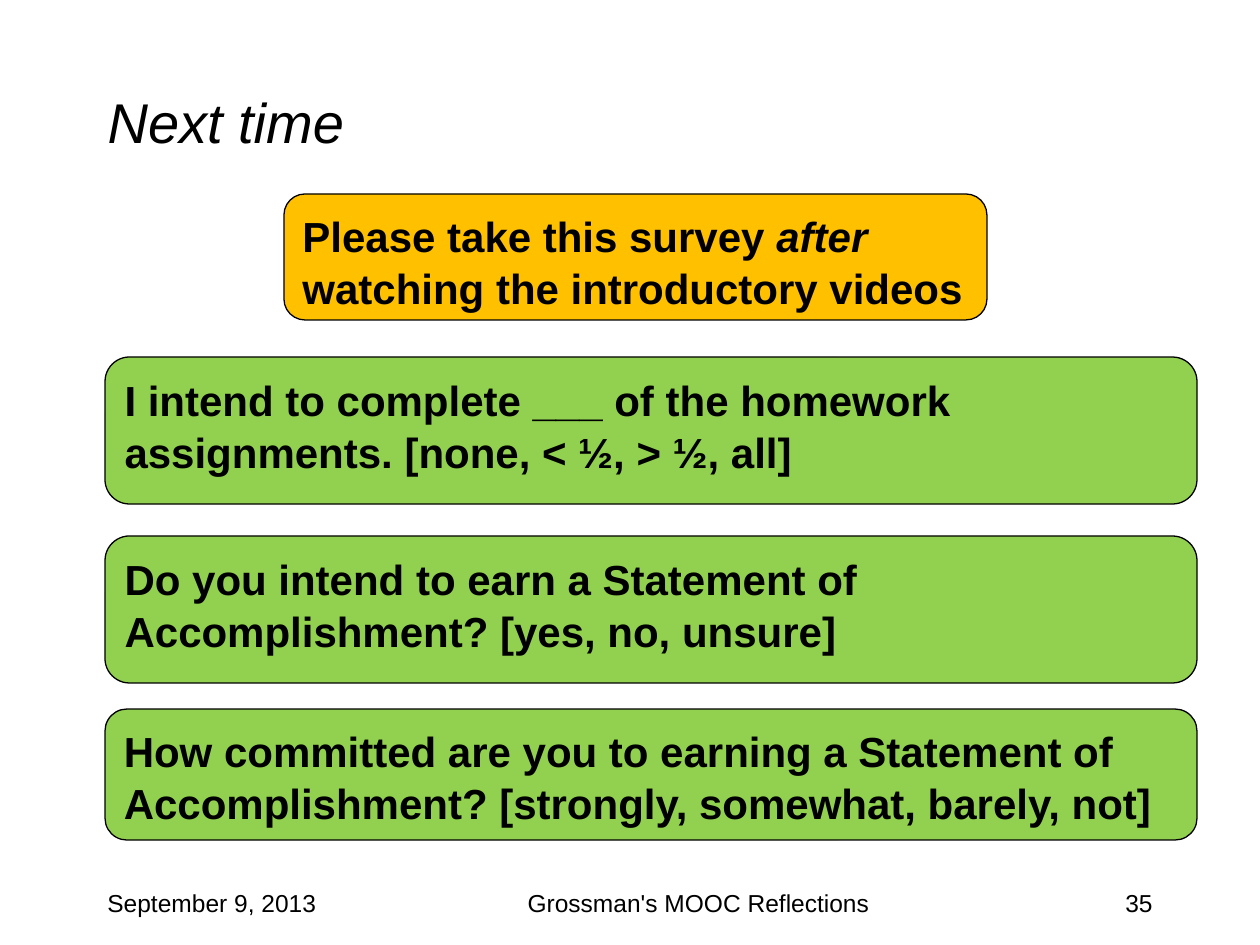
from dataclasses import dataclass

import pptx
import pptx.dml.color
import pptx.enum.shapes
import pptx.enum.text
import pptx.util

SCALE = 914400 / 126
FONT = "Arial"
ALIGN = pptx.enum.text.PP_ALIGN
ANCHOR = pptx.enum.text.MSO_ANCHOR
GREEN = "92D050"


@dataclass(frozen=True)
class Area:
    left: int
    top: int
    width: int
    height: int

    def emu(self) -> list[int]:
        return [px(n) for n in (self.left, self.top, self.width, self.height)]


@dataclass(frozen=True)
class Span:
    text: str
    italic: bool = False


@dataclass(frozen=True)
class Card:
    area: Area
    fill: str
    spans: tuple[Span, ...]


@dataclass(frozen=True)
class Footer:
    area: Area
    text: str
    align: ALIGN


def px(length: int) -> int:
    return round(length * SCALE)


def color(value: str) -> pptx.dml.color.RGBColor:
    return pptx.dml.color.RGBColor.from_string(value)


def style(para, size: int, align: ALIGN = ALIGN.LEFT) -> None:
    para.alignment = align
    para.font.name = FONT
    para.font.size = pptx.util.Pt(size)
    para.font.color.rgb = color("000000")


def draw_title(page, text: str, area: Area) -> None:
    title = page.shapes.title
    title.left, title.top, title.width, title.height = area.emu()
    title.text_frame.text = text
    title.text_frame.vertical_anchor = ANCHOR.MIDDLE
    para = title.text_frame.paragraphs[0]
    style(para, 32)
    para.font.italic = True


def draw_footer(page, footer: Footer) -> None:
    box = page.shapes.add_textbox(*footer.area.emu())
    box.text_frame.word_wrap = True
    box.text_frame.text = footer.text
    style(box.text_frame.paragraphs[0], 14, footer.align)


def draw_card(page, card: Card) -> None:
    box = page.shapes.add_shape(
        pptx.enum.shapes.MSO_SHAPE.ROUNDED_RECTANGLE, *card.area.emu()
    )
    box.shadow.inherit = False
    box.fill.solid()
    box.fill.fore_color.rgb = color(card.fill)
    box.line.color.rgb = color("000000")
    box.line.width = pptx.util.Pt(0.75)
    frame = box.text_frame
    frame.word_wrap = True
    frame.vertical_anchor = ANCHOR.TOP
    frame.margin_top = px(8)
    para = frame.paragraphs[0]
    style(para, 24)
    para.font.bold = True
    para.line_spacing = 1.04
    for span in card.spans:
        run = para.add_run()
        run.text = span.text
        if span.italic:
            run.font.italic = True


def question(top: int, height: int, text: str) -> Card:
    return Card(Area(105, top, 1092, height), GREEN, (Span(text),))


FOOTERS = (
    Footer(Area(95, 882, 262, 63), "September 9, 2013", ALIGN.LEFT),
    Footer(Area(903, 882, 262, 63), "35", ALIGN.RIGHT),
    Footer(Area(347, 882, 703, 63), "Grossman's MOOC Reflections", ALIGN.CENTER),
)

CARDS = (
    Card(
        Area(284, 194, 703, 126),
        "FFC000",
        (
            Span("Please take this survey "),
            Span("after", italic=True),
            Span(" watching the introductory videos"),
        ),
    ),
    question(
        357,
        147,
        "I intend to complete ___ of the homework assignments. "
        "[none, < ½, > ½, all]",
    ),
    question(
        709,
        131,
        "How committed are you to earning a Statement of Accomplishment? "
        "[strongly, somewhat, barely, not]",
    ),
    question(
        536,
        147,
        "Do you intend to earn a Statement of Accomplishment? [yes, no, unsure]",
    ),
)


def main() -> None:
    deck = pptx.Presentation()
    deck.slide_width, deck.slide_height = px(1260), px(945)
    page = deck.slides.add_slide(deck.slide_layouts[5])
    draw_title(page, "Next time", Area(95, 42, 1071, 158))
    for footer in FOOTERS:
        draw_footer(page, footer)
    for card in CARDS:
        draw_card(page, card)
    deck.save("out.pptx")


if __name__ == "__main__":
    main()
